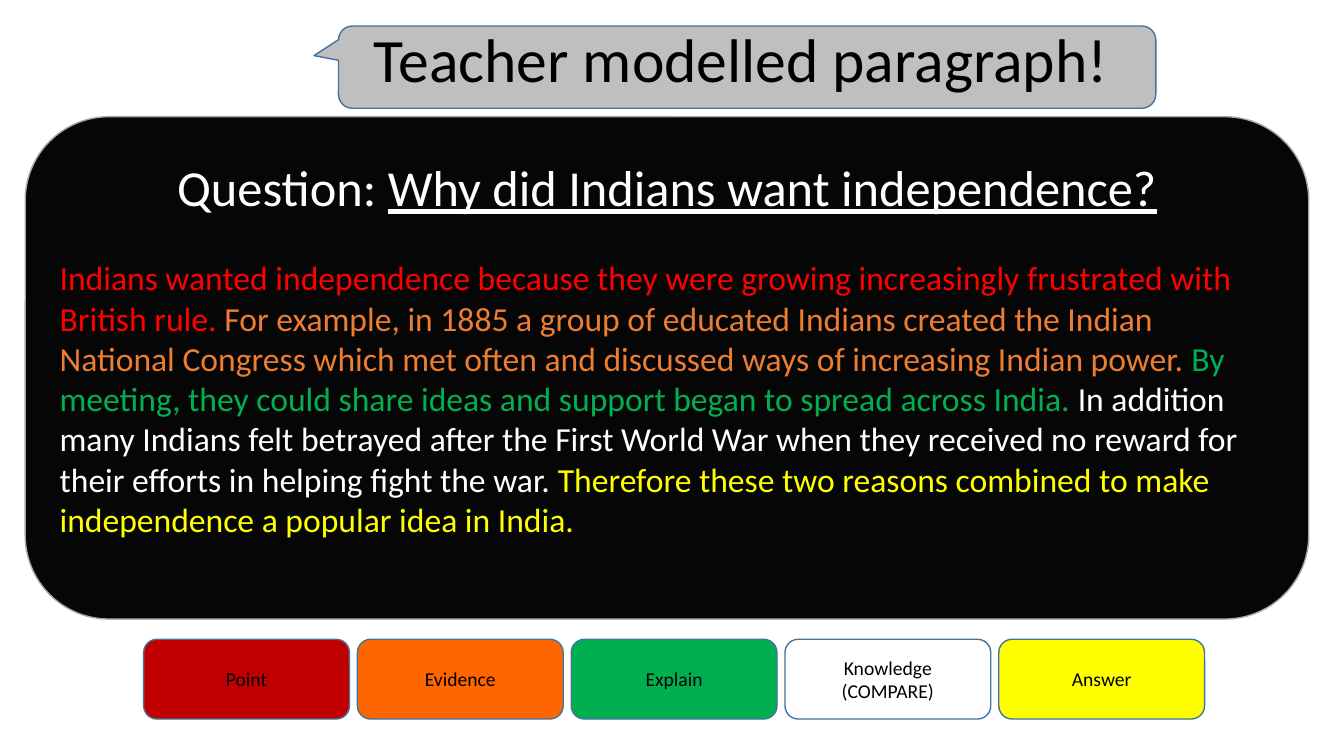
import pptx
import pptx.dml.color
import pptx.enum.shapes
import pptx.enum.text
import pptx.util

SHAPE = pptx.enum.shapes.MSO_SHAPE
ALIGN = pptx.enum.text.PP_ALIGN
COLOURS = {
    "black": "000000", "panel": "060606", "panel edge": "A6A6A6",
    "callout": "BFBFBF", "edge": "43739E", "white": "FFFFFF",
    "red": "FF0000", "dark red": "C00000", "orange": "ED7D31",
    "bright orange": "FF6600", "green": "00B050", "yellow": "FFFF00",
}
COLUMNS, ROWS = 160, 90

ANSWER = [
    ("Indians wanted independence because they were growing increasingly "
     "frustrated with British rule. ", "red"),
    ("For example, in 1885 a group of educated Indians created the Indian "
     "National Congress which met often and discussed ways of increasing "
     "Indian power. ", "orange"),
    ("By meeting, they could share ideas and support began to spread across "
     "India. ", "green"),
    ("In addition many Indians felt betrayed after the First World War when "
     "they received no reward for their efforts in helping fight the war. ",
     "white"),
    ("Therefore these two reasons combined to make independence a popular "
     "idea in India.", "yellow"),
]
LABELS = [
    ("Point", "dark red"), ("Evidence", "bright orange"), ("Explain", "green"),
    ("Knowledge (COMPARE)", "white"), ("Answer", "yellow"),
]


def colour(name):
    return pptx.dml.color.RGBColor.from_string(COLOURS[name])


def apply(target, formats):
    for name, value in formats.items():
        setattr(target, name, value)


class ParagraphSlide:
    font = "Calibri"

    def __init__(self, deck):
        self.page = deck.slides.add_slide(deck.slide_layouts[5])
        self.column = deck.slide_width / COLUMNS
        self.row = deck.slide_height / ROWS

    def place(self, left, top, width, height):
        """Turn grid columns and rows into slide lengths."""
        return {"left": round(left * self.column), "top": round(top * self.row),
                "width": round(width * self.column),
                "height": round(height * self.row)}

    def shape(self, kind, grid, fill, edge="edge"):
        box = self.page.shapes.add_shape(kind, *self.place(*grid).values())
        box.shadow.inherit = False
        box.fill.solid()
        box.fill.fore_color.rgb = colour(fill)
        box.line.color.rgb = colour(edge)
        box.line.width = pptx.util.Pt(1)
        apply(box.text_frame, {
            "word_wrap": True,
            "vertical_anchor": pptx.enum.text.MSO_ANCHOR.MIDDLE})
        return box

    def add_spans(self, para, spans, size, **formats):
        """Fill a paragraph with (text, colour, underline) spans."""
        apply(para, formats)
        for text, ink, underline in spans:
            span = para.add_run()
            span.text = text
            apply(span.font, {"name": self.font, "size": pptx.util.Pt(size),
                              "underline": underline})
            span.font.color.rgb = colour(ink)

    def panel(self, grid, question, answer):
        frame = self.shape(SHAPE.ROUNDED_RECTANGLE, grid, "panel",
                           "panel edge").text_frame
        frame.margin_bottom = pptx.util.Inches(0.45)
        self.add_spans(
            frame.paragraphs[0],
            [("Question: ", "white", False), (question, "white", True)],
            36, alignment=ALIGN.CENTER, space_after=pptx.util.Pt(29))
        self.add_spans(frame.add_paragraph(),
                       [(text, ink, False) for text, ink in answer],
                       24, alignment=ALIGN.LEFT)

    def callout(self, grid, pointer):
        box = self.shape(SHAPE.ROUNDED_RECTANGULAR_CALLOUT, grid, "callout")
        for index, value in enumerate(pointer):
            box.adjustments[index] = value

    def title(self, grid, text):
        """Set the title and bring it in front of the shapes drawn so far."""
        box = self.page.shapes.title
        apply(box, self.place(*grid))
        apply(box.text_frame, {
            "word_wrap": True, "auto_size": pptx.enum.text.MSO_AUTO_SIZE.NONE,
            "vertical_anchor": pptx.enum.text.MSO_ANCHOR.MIDDLE})
        self.add_spans(box.text_frame.paragraphs[0], [(text, "black", False)],
                       44, alignment=ALIGN.LEFT, line_spacing=0.9)
        box.element.getparent().append(box.element)

    def label(self, grid, text, fill):
        box = self.shape(SHAPE.ROUNDED_RECTANGLE, grid, fill)
        self.add_spans(box.text_frame.paragraphs[0], [(text, "black", False)],
                       14, alignment=ALIGN.CENTER)


def main():
    deck = pptx.Presentation()
    deck.slide_width = pptx.util.Inches(13.33)
    deck.slide_height = pptx.util.Inches(7.5)
    slide = ParagraphSlide(deck)
    slide.panel((3, 13.9, 152.8, 59.8),
                "Why did Indians want independence?", ANSWER)
    slide.callout((40.3, 3.1, 97.3, 9.8), (-0.53, -0.14, 0.17))
    slide.title((43.3, 2, 94.3, 10.8), "Teacher modelled paragraph!")
    for index, (text, fill) in enumerate(LABELS):
        slide.label((17.1 + 25.45 * index, 76.1, 24.5, 9.5), text, fill)
    deck.save("out.pptx")


if __name__ == "__main__":
    main()
